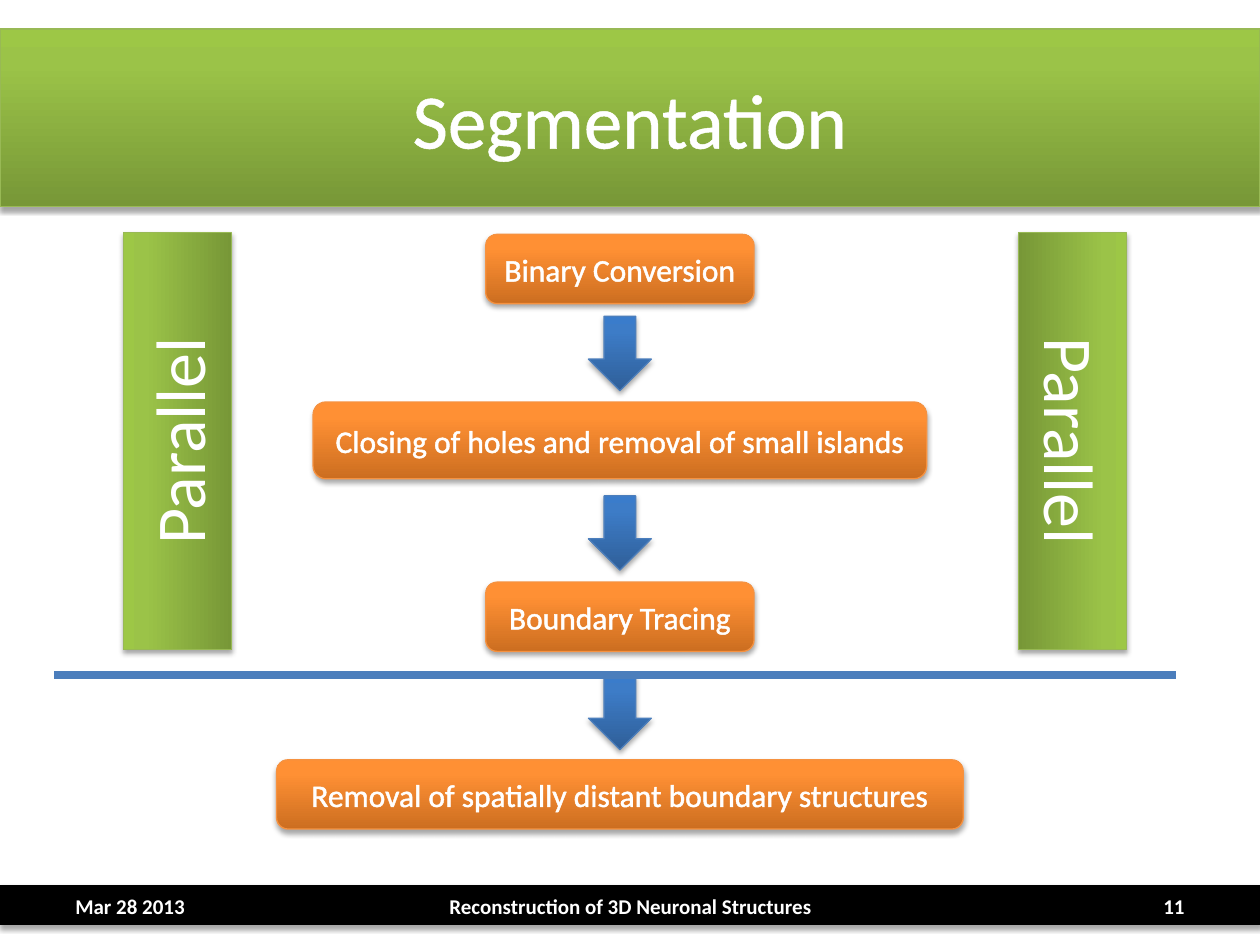
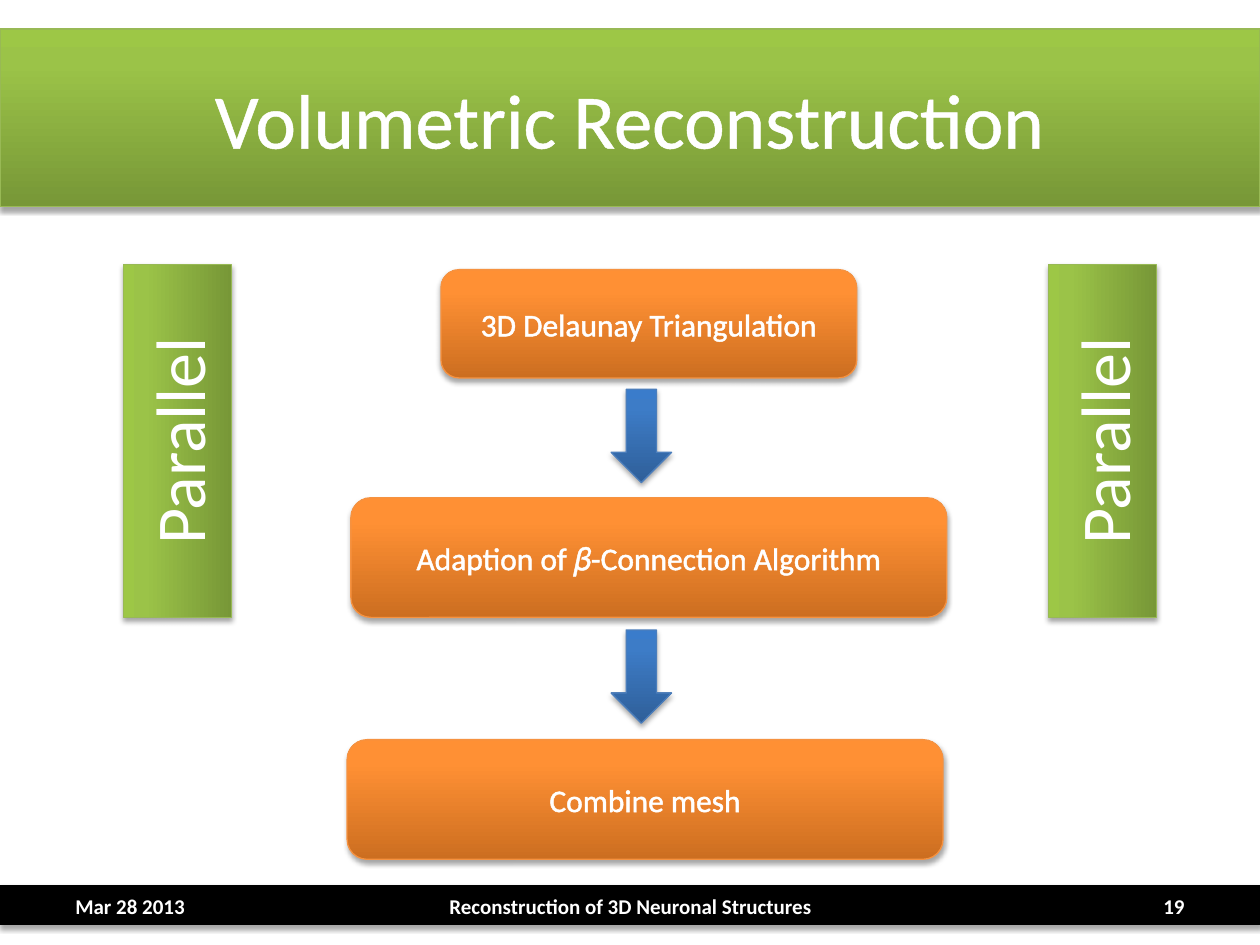
from dataclasses import dataclass

from lxml import etree
from pptx import Presentation, util as u
from pptx.dml.color import RGBColor
from pptx.enum import shapes, text
from pptx.oxml.ns import qn

CELL = 0.1  # inches: the slide is a grid of 100 columns by 75 rows
COLUMNS, ROWS = 100, 75
TITLE_ONLY = 5


@dataclass(frozen=True)
class Paint:
    line: str
    stops: tuple[tuple[int, str], ...]  # percent and colour, from the bottom up


@dataclass(frozen=True)
class Theme:
    font: str = "Calibri"
    light: str = "FFFFFF"
    green: Paint = Paint("98B955", ((0, "779737"), (80, "9BC348"), (100, "9DC746")))
    orange: Paint = Paint("F69240", ((0, "CC6E20"), (80, "FF9034"), (100, "FF9136")))
    blue: Paint = Paint("4B7EBC", ((0, "2F5F99"), (80, "3D7CC7"), (100, "3A7CCB")))
    black: Paint = Paint("000000", ((0, "000000"),))
    title_size: int = 44
    rail_size: int = 40
    step_size: int = 18
    footer_size: int = 12
    hairline: float = 0.75
    divider: float = 4.5
    outline: float = 1.45


@dataclass(frozen=True)
class Box:
    """Left, top, width and height in grid cells."""
    left: float
    top: float
    width: float
    height: float

    @classmethod
    def centred(cls, x: float, top: float, width: float, height: float) -> "Box":
        return cls(x - width / 2, top, width, height)

    def emu(self) -> tuple[int, ...]:
        return tuple(cells(n) for n in (self.left, self.top, self.width, self.height))


@dataclass(frozen=True)
class Step:
    label: str
    centre: float
    top: float
    width: float
    height: float


@dataclass(frozen=True)
class Rail:
    """Upright side panel, named by its centre and turn."""
    centre: float
    turn: int


@dataclass(frozen=True)
class Flow:
    title: str
    number: str
    steps: tuple[Step, ...]
    rails: tuple[Rail, ...]
    rail_length: float
    arrow: Box  # the first arrow
    arrow_pitch: float
    divider_row: float | None = None


THEME = Theme()
TITLE_BAND = Box(0, 2.3, COLUMNS, 14.1)
FOOTER_BAND = Box(0, 70.3, COLUMNS, 3.1)
DATE_AREA = Box(5, 70.3, 23.3, 3.2)
TALK_AREA = Box(34.2, 70.3, 31.7, 3.2)
NUMBER_AREA = Box(71.7, 70.3, 23.3, 3.2)
RAIL_MIDDLE, RAIL_WIDTH = 35, 8.6
DIVIDER_COLUMNS = (4.3, 93.3)

FLOWS = (
    Flow(
        "Segmentation", "11",
        (Step("Binary Conversion", 49.2, 18.6, 21.3, 5.5),
         Step("Closing of holes and removal of small islands", 49.2, 31.9, 48.7, 6.1),
         Step("Boundary Tracing", 49.2, 46.2, 21.3, 5.5),
         Step("Removal of spatially distant boundary structures", 49.2, 60.3, 54.5, 5.5)),
        (Rail(85.1, 90), Rail(14.1, 270)), 33.1,
        Box.centred(49.2, 25.1, 5, 5.9), 14.25, divider_row=53.6),
    Flow(
        "Volumetric Reconstruction", "19",
        (Step("3D Delaunay Triangulation", 51.5, 21.4, 33, 8.6),
         Step("Adaption of 𝛽-Connection Algorithm", 51.5, 39.5, 47.3, 9.5),
         Step("Combine mesh", 51.2, 58.7, 47.3, 9.5)),
        (Rail(14.1, 270), Rail(87.5, 270)), 28,
        Box.centred(50.9, 30.9, 4.8, 7.4), 19.1),
)


def cells(count: float) -> int:
    return u.Inches(count * CELL)


def write(shape, words: str, *, size: int, bold: bool = False, outlined: bool = False,
          align=text.PP_ALIGN.CENTER) -> None:
    frame = shape.text_frame
    frame.word_wrap = True
    frame.vertical_anchor = text.MSO_ANCHOR.MIDDLE
    paragraph = frame.paragraphs[0]
    paragraph.alignment = align
    run = paragraph.add_run()
    run.text = words
    font = run.font
    font.name, font.size, font.bold = THEME.font, u.Pt(size), bold
    font.color.rgb = RGBColor.from_string(THEME.light)
    if outlined:
        edge = etree.Element(qn("a:ln"), w=str(u.Pt(THEME.outline)))
        fill = etree.SubElement(edge, qn("a:solidFill"))
        etree.SubElement(fill, qn("a:srgbClr"), val=THEME.light)
        run._r.get_or_add_rPr().insert(0, edge)


def add_gradient(shape, stops: tuple[tuple[int, str], ...]) -> None:
    shape.fill.gradient()
    shape.fill.gradient_angle = 90
    stop_list = shape.element.spPr.find(qn("a:gradFill")).find(qn("a:gsLst"))
    for old in list(stop_list):
        stop_list.remove(old)
    for percent, colour in stops:
        stop = etree.SubElement(stop_list, qn("a:gs"), pos=str(percent * 1000))
        etree.SubElement(stop, qn("a:srgbClr"), val=colour)


def add_shadow(shape) -> None:
    shape.shadow.inherit = False
    effects = shape.element.spPr.find(qn("a:effectLst"))
    shadow = etree.SubElement(effects, qn("a:outerShdw"), blurRad=str(u.Pt(3.1)),
                              dist=str(u.Pt(1.8)), dir="5400000", rotWithShape="0")
    colour = etree.SubElement(shadow, qn("a:srgbClr"), val="000000")
    etree.SubElement(colour, qn("a:alpha"), val="35000")


def add_block(slide, kind, box: Box, paint: Paint):
    block = slide.shapes.add_shape(kind, *box.emu())
    if len(paint.stops) > 1:
        add_gradient(block, paint.stops)
    else:
        block.fill.solid()
        block.fill.fore_color.rgb = RGBColor.from_string(paint.stops[0][1])
    block.line.color.rgb = RGBColor.from_string(paint.line)
    block.line.width = u.Pt(THEME.hairline)
    add_shadow(block)
    return block


def add_footer(slide, area: Box, words: str, align):
    footer = slide.shapes.add_textbox(*area.emu())
    write(footer, words, size=THEME.footer_size, bold=True, align=align)
    return footer


def dress_layout(layout, slide) -> None:
    """Give the layout the bands and fixed footers, drawn on slide and moved over."""
    for holder in list(layout.placeholders):
        if holder.placeholder_format.type == shapes.PP_PLACEHOLDER.TITLE:
            holder.left, holder.top, holder.width, holder.height = TITLE_BAND.emu()
        else:
            layout.shapes.element.remove(holder.element)
    rect = shapes.MSO_SHAPE.RECTANGLE
    for part in (
        add_block(slide, rect, FOOTER_BAND, THEME.black),
        add_block(slide, rect, TITLE_BAND, THEME.green),
        add_footer(slide, DATE_AREA, "Mar 28 2013", text.PP_ALIGN.LEFT),
        add_footer(slide, TALK_AREA, "Reconstruction of 3D Neuronal Structures",
                   text.PP_ALIGN.CENTER),
    ):
        layout.shapes.element.append(part.element)


def add_rail(slide, rail: Rail, length: float) -> None:
    box = Box.centred(rail.centre, RAIL_MIDDLE - RAIL_WIDTH / 2, length, RAIL_WIDTH)
    panel = add_block(slide, shapes.MSO_SHAPE.RECTANGLE, box, THEME.green)
    panel.rotation = rail.turn
    write(panel, "Parallel", size=THEME.rail_size)


def add_divider(slide, row: float) -> None:
    start, end = map(cells, DIVIDER_COLUMNS)
    divider = slide.shapes.add_connector(shapes.MSO_CONNECTOR.STRAIGHT,
                                         start, cells(row), end, cells(row))
    divider.line.color.rgb = RGBColor.from_string(THEME.blue.line)
    divider.line.width = u.Pt(THEME.divider)
    etree.SubElement(divider.element.spPr, qn("a:effectLst"))


def draw_flow(slide, flow: Flow) -> None:
    write(slide.shapes.title, flow.title, size=THEME.title_size, outlined=True)
    add_footer(slide, NUMBER_AREA, flow.number, text.PP_ALIGN.RIGHT)
    for step in flow.steps:
        box = Box.centred(step.centre, step.top, step.width, step.height)
        block = add_block(slide, shapes.MSO_SHAPE.ROUNDED_RECTANGLE, box, THEME.orange)
        write(block, step.label, size=THEME.step_size, outlined=True)
    first = flow.arrow
    for gap in range(len(flow.steps) - 1):
        box = Box(first.left, first.top + gap * flow.arrow_pitch, first.width, first.height)
        add_block(slide, shapes.MSO_SHAPE.DOWN_ARROW, box, THEME.blue)
    for rail in flow.rails:
        add_rail(slide, rail, flow.rail_length)
    if flow.divider_row is not None:
        add_divider(slide, flow.divider_row)


def main() -> None:
    deck = Presentation()
    deck.slide_width, deck.slide_height = cells(COLUMNS), cells(ROWS)
    layout = deck.slide_layouts[TITLE_ONLY]
    slides = [deck.slides.add_slide(layout) for _ in FLOWS]
    dress_layout(layout, slides[0])
    for slide, flow in zip(slides, FLOWS):
        draw_flow(slide, flow)
    deck.save("out.pptx")


if __name__ == "__main__":
    main()
